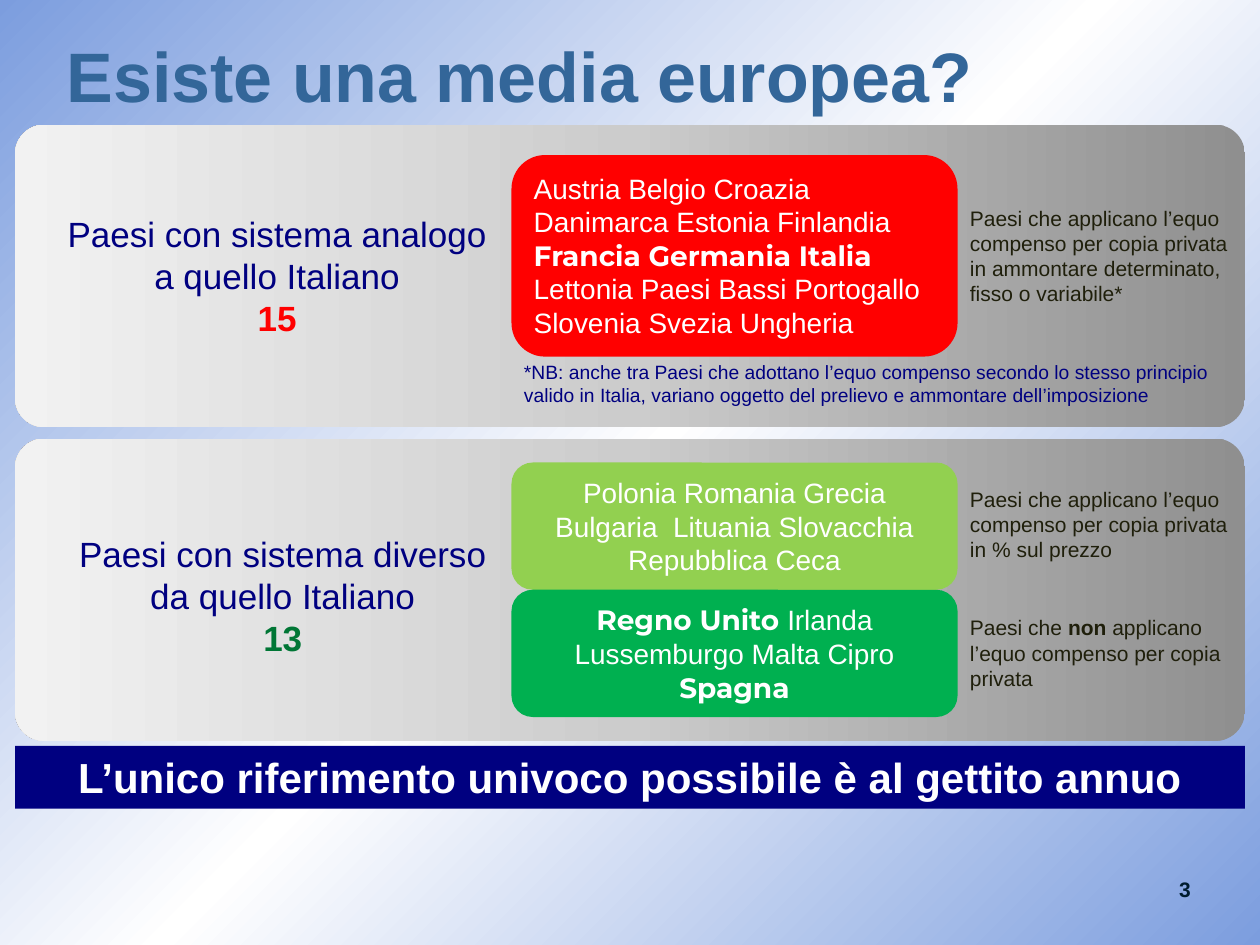
from lxml import etree
from pptx import Presentation
from pptx import util as u
from pptx.dml.color import RGBColor
from pptx.enum import shapes, text
from pptx.oxml import ns

Pt = u.Pt
COLORS = {
    "sky": "7C9DDE", "white": "FFFFFF", "grey": "8F8F8F", "silver": "CCCCCC",
    "pale": "F2F2F2", "title": "336699", "navy": "000080", "red": "FF0000",
    "lime": "92D050", "green": "00B050", "forest": "007635", "note": "1F1F0B",
    "number": "001D2E",
}
LEFT, CENTER = text.PP_ALIGN.LEFT, text.PP_ALIGN.CENTER
TOP, MIDDLE = text.MSO_ANCHOR.TOP, text.MSO_ANCHOR.MIDDLE
PLAIN = {"name": "Arial", "bold": False}
BOLD = {"name": "Arial", "bold": True}
STRONG = {"name": "Montserrat", "bold": True}
SHARE_LEFT, SHARE_WIDTH = 283.7, 254.9
NOTE_LEFT, NOTE_WIDTH = 538.6, 172.8


def color(name):
    return RGBColor.from_string(COLORS[name])


def write(shape, paras, size, tint, align=LEFT, anchor=TOP, spacing=None):
    frame = shape.text_frame
    frame.word_wrap = True
    frame.vertical_anchor = anchor
    for index, spans in enumerate(paras):
        para = frame.paragraphs[0] if index == 0 else frame.add_paragraph()
        para.alignment = align
        para.line_spacing = spacing
        for words, style in spans:
            span = para.add_run()
            span.text = words
            values = {"size": Pt(size), **style}
            span.font.color.rgb = color(values.pop("tint", tint))
            for key, value in values.items():
                setattr(span.font, key, value)


def add_text(page, box, paras, size, tint, **layout):
    write(page.shapes.add_textbox(*map(Pt, box)), paras, size, tint, **layout)


def add_block(page, kind, box, fill=None):
    block = page.shapes.add_shape(kind, *map(Pt, box))
    block.shadow.inherit = False
    block.line.fill.background()
    if fill:
        block.fill.solid()
        block.fill.fore_color.rgb = color(fill)
    return block


def add_gradient(block, names, angle):
    block.fill.gradient()
    block.fill.gradient_angle = angle
    stops = block._element.spPr.find(".//" + ns.qn("a:gsLst"))
    for stop in list(stops):
        stops.remove(stop)
    for index, name in enumerate(names):
        stop = etree.SubElement(stops, ns.qn("a:gs"), pos=str(index * 50000))
        etree.SubElement(stop, ns.qn("a:srgbClr"), val=COLORS[name])


def add_backdrop(page, box):
    backdrop = add_block(page, shapes.MSO_SHAPE.RECTANGLE, box)
    add_gradient(backdrop, ("sky", "white", "sky"), 315)


def add_panel(page, box, heading_box, heading, count, tint, groups):
    left, top = box[:2]
    panel = add_block(page, shapes.MSO_SHAPE.ROUNDED_RECTANGLE, box)
    panel.adjustments[0] = 0.097
    add_gradient(panel, ("grey", "silver", "pale"), 180)
    dx, dy, width, height = heading_box
    add_text(page, (left + dx, top + dy, width, height),
             [[(heading, PLAIN)], [(count, {**BOLD, "tint": tint})]],
             20, "navy", align=CENTER)
    for dy, height, fill, align, countries, note_dy, note_height, note in groups:
        share = add_block(page, shapes.MSO_SHAPE.ROUNDED_RECTANGLE,
                          (left + SHARE_LEFT, top + dy, SHARE_WIDTH, height), fill)
        write(share, [countries], 16, "white", align=align,
              anchor=TOP if align == LEFT else MIDDLE)
        add_text(page, (left + NOTE_LEFT, top + note_dy, NOTE_WIDTH, note_height),
                 [note], 12, "note")


def add_footnote(page, box):
    add_text(page, box, [[(
        "*NB: anche tra Paesi che adottano l’equo compenso secondo lo stesso principio "
        "valido in Italia, variano oggetto del prelievo e ammontare dell’imposizione",
        PLAIN)]], 11, "navy")


def add_banner(page, box):
    banner = add_block(page, shapes.MSO_SHAPE.RECTANGLE, box, "navy")
    write(banner, [[("L’unico riferimento univoco possibile è al gettito annuo", BOLD)]],
          24, "white", align=CENTER)


SIMILAR = [(
    17.3, 115.2, "red", LEFT,
    [("Austria Belgio Croazia Danimarca Estonia Finlandia ", PLAIN),
     ("Francia Germania Italia ", STRONG),
     ("Lettonia Paesi Bassi Portogallo Slovenia Svezia Ungheria", PLAIN)],
    42.5, 65.5,
    [("Paesi che applicano l’equo compenso per copia privata "
      "in ammontare determinato, fisso o variabile*", PLAIN)],
)]
DIFFERENT = [
    (13.7, 72.7, "lime", CENTER,
     [("Polonia Romania Grecia Bulgaria  Lituania Slovacchia Repubblica Ceca", PLAIN)],
     23.8, 51.1,
     [("Paesi che applicano l’equo compenso per copia privata in % sul prezzo", PLAIN)]),
    (86.4, 72.7, "green", CENTER,
     [("Regno Unito ", STRONG), ("Irlanda Lussemburgo Malta Cipro ", PLAIN),
      ("Spagna", STRONG)],
     97.2, 51.1,
     [("Paesi che ", PLAIN), ("non", BOLD),
      (" applicano l’equo compenso per copia privata", PLAIN)]),
]


def main():
    deck = Presentation()
    deck.slide_width, deck.slide_height = Pt(720), Pt(540)
    page = deck.slides.add_slide(deck.slide_layouts[6])
    left, top, width, height, step = 8.6, 71.3, 702.8, 172.8, 179.3
    add_backdrop(page, (0, 0, 720, 540))
    add_panel(page, (left, top + step, width, height), (22.3, 50.4, 261.4, 80),
              "Paesi con sistema diverso da quello Italiano", "13", "forest", DIFFERENT)
    add_panel(page, (left, top, width, height), (16.6, 46.8, 266.4, 80),
              "Paesi con sistema analogo a quello Italiano", "15", "red", SIMILAR)
    add_footnote(page, (left + SHARE_LEFT, top + 131, width - SHARE_LEFT, 33.8))
    add_text(page, (31, 10.8, 674.6, 72), [[("Esiste una media europea?", BOLD)]],
             40, "title", anchor=MIDDLE, spacing=0.8)
    add_banner(page, (left, 426.2, width, 36))
    add_text(page, (660.2, 497.5, 33.8, 21.6), [[("3", BOLD)]], 12, "number", align=CENTER)
    deck.save("out.pptx")


if __name__ == "__main__":
    main()
